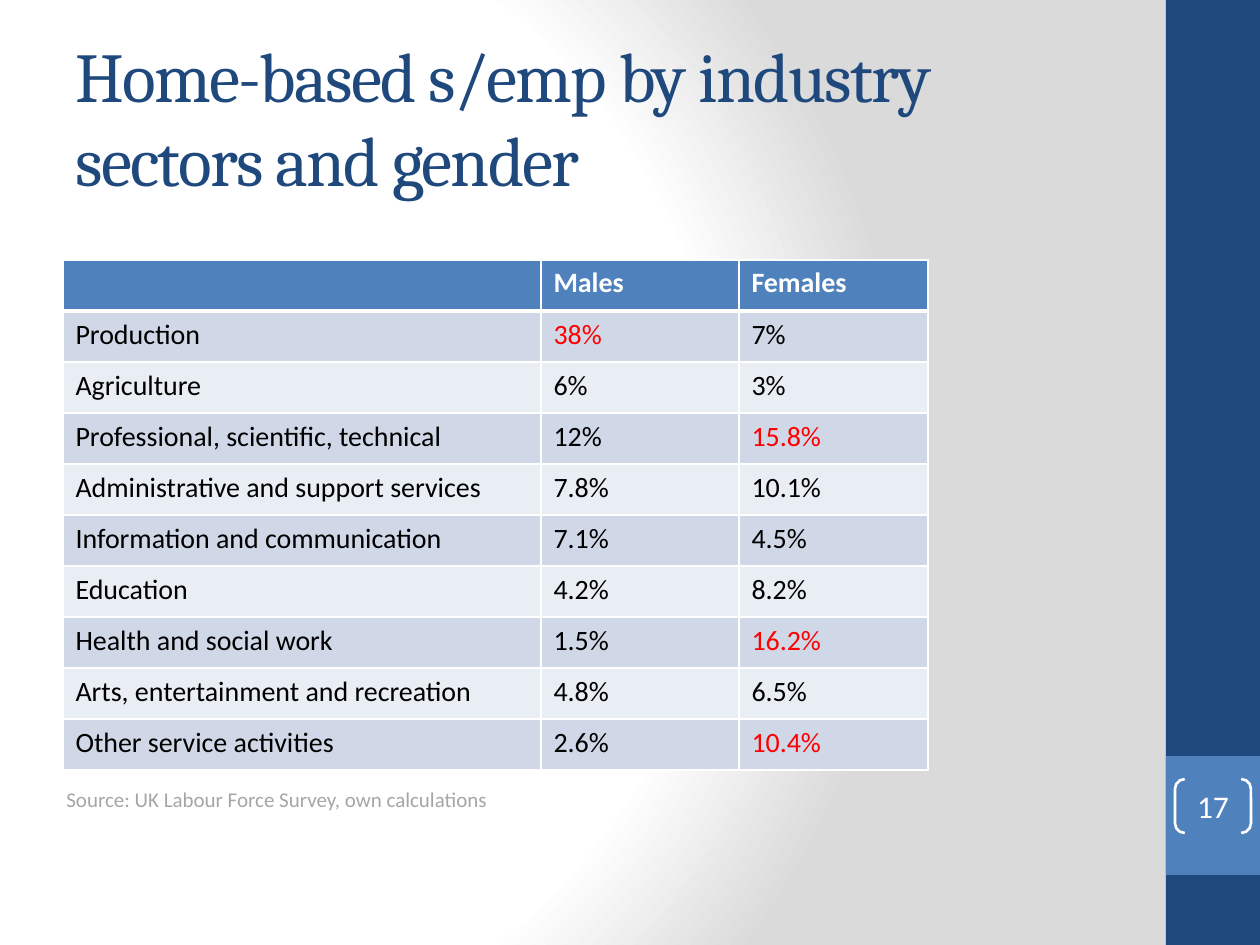
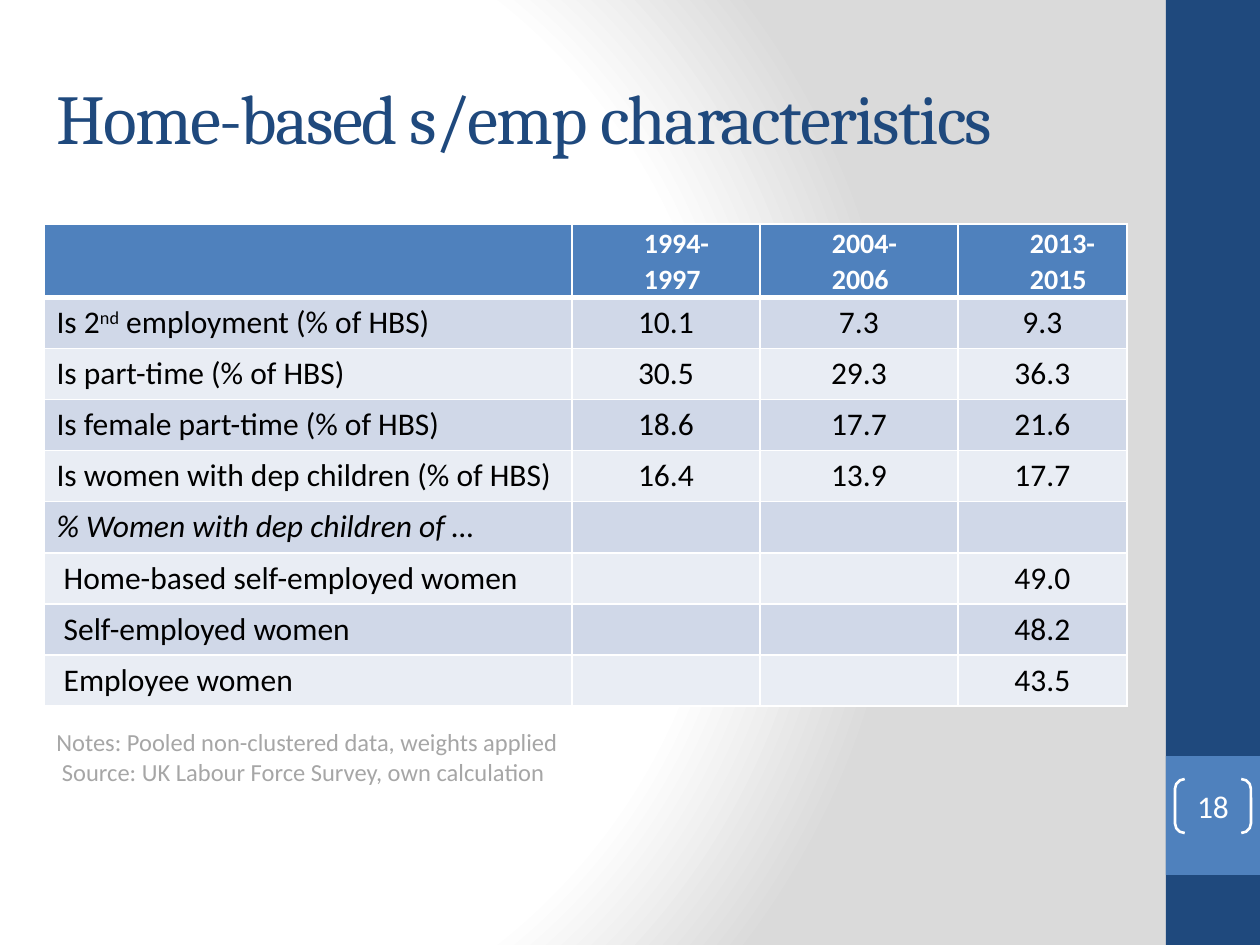
import dataclasses

import pptx
import pptx.dml.color
import pptx.enum.shapes
import pptx.enum.text
import pptx.oxml
import pptx.oxml.ns
import pptx.util

SHAPE = pptx.enum.shapes.MSO_SHAPE
ALIGN = pptx.enum.text.PP_ALIGN
MIDDLE = pptx.enum.text.MSO_ANCHOR.MIDDLE
NS = pptx.oxml.ns.nsdecls("a")
rgb = pptx.dml.color.RGBColor.from_string


@dataclasses.dataclass(frozen=True)
class Theme:
    navy: str = "1F497D"
    blue: str = "4F81BD"
    white: str = "FFFFFF"
    black: str = "000000"
    red: str = "FF0000"
    muted: str = "A6A6A6"
    shade: str = "DADADA"
    bands: tuple = ("E9EDF4", "D0D8E8")
    title_font: str = "Cambria"
    body_font: str = "Calibri"
    title_size: int = 40
    header_size: int = 16
    number_size: int = 18


T = Theme()


def px(*lengths):
    """Turn lengths at 126 px to the inch into a list of EMU."""
    return [pptx.util.Emu(round(n * 914400 / 126)) for n in lengths]


def write(p, text, size, color, font=T.body_font, bold=False, italic=False,
          align=ALIGN.LEFT, **rpr):
    """Append a run to a paragraph; rpr holds raw attributes such as spc."""
    p.alignment = align
    r = p.add_run()
    r.text = text
    r.font.size, r.font.name = pptx.util.Pt(size), font
    r.font.bold, r.font.italic = bold, italic
    r.font.color.rgb = rgb(color)
    for name, value in rpr.items():
        r.font._element.set(name, str(value))


INDUSTRY = [
    ("", "Males", "Females"),
    ("Production", "38%", "7%"),
    ("Agriculture", "6%", "3%"),
    ("Professional, scientific, technical", "12%", "15.8%"),
    ("Administrative and support services", "7.8%", "10.1%"),
    ("Information and communication", "7.1%", "4.5%"),
    ("Education", "4.2%", "8.2%"),
    ("Health and social work", "1.5%", "16.2%"),
    ("Arts, entertainment and recreation", "4.8%", "6.5%"),
    ("Other service activities", "2.6%", "10.4%"),
]
CHARACTERISTICS = [
    ("", "1994-1997", "2004-2006", "2013-2015"),
    ("Is 2^nd^ employment (% of HBS)", "10.1", "7.3", "9.3"),
    ("Is part-time (% of HBS)", "30.5", "29.3", "36.3"),
    ("Is female part-time (% of HBS)", "18.6", "17.7", "21.6"),
    ("Is women with dep children (% of HBS)", "16.4", "13.9", "17.7"),
    ("% Women with dep children of …", "", "", ""),
    (" Home-based self-employed women", "", "", "49.0"),
    (" Self-employed women", "", "", "48.2"),
    (" Employee women", "", "", "43.5"),
]
SLIDES = [
    dict(number="17", title="Home-based s/emp by industry sectors and gender",
         title_box=(63, 38, 1050, 157), rows=INDUSTRY, table_at=(63, 260),
         cols=(478, 198, 189), header_height=51, size=16, value_align=ALIGN.LEFT,
         period_header=False, highlights=("38%", "15.8%", "16.2%", "10.4%"),
         italic_row=None, note_box=(54, 780, 566, 38), note_size=12,
         note=["Source: UK Labour Force Survey, own calculations"]),
    dict(number="18", title="Home-based s/emp characteristics",
         title_box=(44, 38, 1069, 157), rows=CHARACTERISTICS, table_at=(44, 224),
         cols=(528, 188, 198, 169), header_height=71, size=18, value_align=ALIGN.CENTER,
         period_header=True, highlights=(), italic_row=5,
         note_box=(44, 721, 804, 72), note_size=14,
         note=["Notes: Pooled non-clustered data, weights applied",
               " Source: UK Labour Force Survey, own calculation"]),
]
ROW_HEIGHT = 51

prs = pptx.Presentation()
prs.slide_width, prs.slide_height = px(1260, 945)

# Shared background on the master
master = prs.slide_master
master.background.fill.solid()
bg = master.element.find(".//" + pptx.oxml.ns.qn("p:bgPr"))
stops = "".join(
    f'<a:gs pos="{pos}000"><a:srgbClr val="{color}"/></a:gs>'
    for pos, color in ((0, T.white), (75, T.white), (100, T.shade)))
bg.replace(bg[0], pptx.oxml.parse_xml(
    f'<a:gradFill {NS} rotWithShape="1"><a:gsLst>{stops}</a:gsLst><a:path path="circle">'
    '<a:fillToRect l="20000" t="50000" r="100000" b="50000"/></a:path></a:gradFill>'))

for number, spec_ in enumerate(SLIDES):
    s = prs.slides.add_slide(prs.slide_layouts[5])

    # Side bands are drawn once and moved to the master
    if number == 0:
        for top, height, color in ((0, 945, T.navy), (756, 119, T.blue)):
            sp = s.shapes.add_shape(SHAPE.RECTANGLE, *px(1166, top, 94, height))
            sp.shadow.inherit = False
            sp.fill.solid()
            sp.fill.fore_color.rgb = rgb(color)
            sp.line.fill.background()
            master.shapes.element.append(sp.element)

    # Title
    title = s.shapes.title
    title.left, title.top, title.width, title.height = px(*spec_["title_box"])
    tf = title.text_frame
    tf.auto_size = pptx.enum.text.MSO_AUTO_SIZE.NONE
    tf.vertical_anchor = MIDDLE
    write(tf.paragraphs[0], spec_["title"], T.title_size, T.navy,
          font=T.title_font, spc=-100)

    # Table
    rows, cols = spec_["rows"], spec_["cols"]
    heights = [spec_["header_height"]] + [ROW_HEIGHT] * (len(rows) - 1)
    table = s.shapes.add_table(
        len(rows), len(cols),
        *px(*spec_["table_at"], sum(cols), sum(heights))).table
    for column, width in zip(table.columns, px(*cols)):
        column.width = width
    for row, height in zip(table.rows, px(*heights)):
        row.height = height

    for i, texts in enumerate(rows):
        for j, text in enumerate(texts):
            cell = table.cell(i, j)
            cell.fill.solid()
            cell.fill.fore_color.rgb = rgb(T.bands[i % 2] if i else T.blue)
            for k, side in enumerate("LRTB"):
                thick = (i, side) in ((0, "B"), (1, "T"))
                cell._tc.tcPr.insert(k, pptx.oxml.parse_xml(
                    f'<a:ln{side} {NS} w="{38100 if thick else 12700}"><a:solidFill>'
                    f'<a:srgbClr val="{T.white}"/></a:solidFill></a:ln{side}>'))
            if not text:
                continue
            p = cell.text_frame.paragraphs[0]
            if i == 0:
                write(p, text, T.header_size, T.white, bold=True)
                if spec_["period_header"]:
                    cell.vertical_anchor = MIDDLE
                    cell.margin_left, cell.margin_right = px(9, 9)
                    cell.margin_top = cell.margin_bottom = 0
                    p.line_spacing = 1.07
                    p._p.get_or_add_pPr().set("marL", str(px(63)[0]))
                continue
            color = T.red if text in spec_["highlights"] else T.black
            # Text between carets is superscript
            for k, part in enumerate(text.split("^")):
                write(p, part, spec_["size"], color, italic=i == spec_["italic_row"],
                      align=spec_["value_align"] if j else ALIGN.LEFT,
                      **({"baseline": 30000} if k % 2 else {}))

    # Slide number in brackets
    sp = s.shapes.add_shape(SHAPE.DOUBLE_BRACKET, *px(1175, 779, 76, 54))
    sp.shadow.inherit = False
    sp.adjustments[0] = 0.18
    sp.fill.background()
    sp.line.color.rgb = rgb(T.white)
    sp.line.width = pptx.util.Pt(1.5)
    tf = sp.text_frame
    tf.margin_left = tf.margin_top = tf.margin_right = tf.margin_bottom = 0
    tf.vertical_anchor = MIDDLE
    write(tf.paragraphs[0], spec_["number"], T.number_size, T.white, align=ALIGN.CENTER)

    # Source note
    tf = s.shapes.add_textbox(*px(*spec_["note_box"])).text_frame
    tf.word_wrap = True
    p = tf.paragraphs[0]
    for k, line in enumerate(spec_["note"]):
        if k:
            p.add_line_break()
        write(p, line, spec_["note_size"], T.muted)

prs.save("out.pptx")
